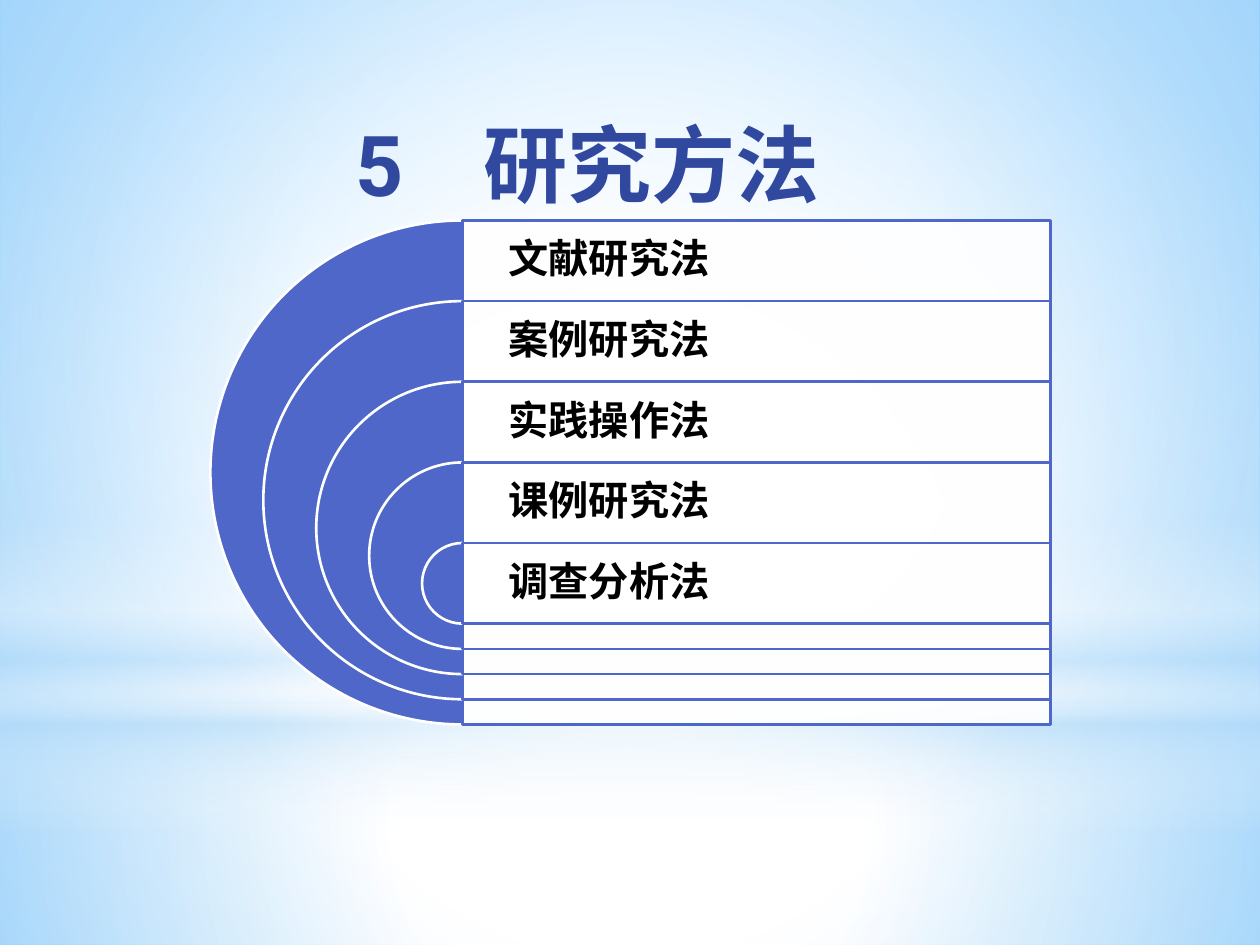
from dataclasses import dataclass

from lxml.etree import SubElement
from pptx import Presentation
from pptx.dml.color import RGBColor
from pptx.enum.shapes import MSO_SHAPE
from pptx.enum.text import MSO_ANCHOR, MSO_AUTO_SIZE, PP_ALIGN
from pptx.oxml.ns import qn
from pptx.util import Emu, Pt

PX = 9144  # 100 px to the inch


@dataclass(frozen=True)
class Theme:
    font: str = "Roboto"
    title_size: int = 48
    label_size: int = 23
    line_width: float = 1.5
    title: str = "31489F"
    accent: str = "4E67C8"
    white: str = "FFFFFF"
    black: str = "000000"
    sky: str = "63BCFF"
    mist: str = "B4DCFA"


THEME = Theme()
METHODS = ["文献研究法", "案例研究法", "实践操作法", "课例研究法", "调查分析法"]


def px(*lengths):
    return [Emu(length * PX) for length in lengths]


def set_gradient(fill, element, stops, center=None):
    """Stops are (position, colour, opacity) in percent; no center means top to bottom."""
    fill.gradient()
    gradient = next(element.iter(qn("a:gradFill")))
    for child in list(gradient):
        gradient.remove(child)
    stop_list = SubElement(gradient, qn("a:gsLst"))
    for position, color, opacity in stops:
        stop = SubElement(stop_list, qn("a:gs"), pos=str(position * 1000))
        set_opacity(SubElement(stop, qn("a:srgbClr"), val=color), opacity)
    if center is None:
        SubElement(gradient, qn("a:lin"), ang="5400000", scaled="0")
    else:
        path_fill = SubElement(gradient, qn("a:path"), path="circle")
        edges = {side: str(inset * 1000) for side, inset in zip("ltrb", center)}
        SubElement(path_fill, qn("a:fillToRect"), **edges)


def set_opacity(color_element, opacity):
    if opacity < 100:
        SubElement(color_element, qn("a:alpha"), val=str(opacity * 1000))


def add_plain_shape(shapes, kind, box):
    shape = shapes.add_shape(kind, *px(*box))
    shape.shadow.inherit = False
    shape.line.fill.background()
    return shape


def set_outline(shape, color):
    shape.line.color.rgb = RGBColor.from_string(color)
    shape.line.width = Pt(THEME.line_width)


def set_font(paragraph, size, color):
    font = paragraph.font
    font.name, font.size, font.bold = THEME.font, Pt(size), True
    font.color.rgb = RGBColor.from_string(color)


def add_backdrop(slide, box):
    left, top, width, height = box
    white, mist = THEME.white, THEME.mist
    middle = (50, 50, 50, 50)
    set_gradient(slide.background.fill, slide.element,
                 [(0, white, 100), (42, white, 100), (100, THEME.sky, 100)], (24, 44, 24, 12))
    horizon = 558
    layers = [
        # Floor, sky, horizon band and central glow
        (MSO_SHAPE.RECTANGLE, horizon, height - horizon,
         [(0, white, 91), (37, white, 76), (100, mist, 79)], middle),
        (MSO_SHAPE.RECTANGLE, 0, horizon,
         [(0, white, 89), (48, white, 62), (100, mist, 79)], middle),
        (MSO_SHAPE.RECTANGLE, 412, 250,
         [(0, white, 0), (29, white, 30), (45, mist, 40), (55, white, 26),
          (65, mist, 60), (100, white, 0)], None),
        (MSO_SHAPE.OVAL, 175, 558, [(0, white, 100), (56, white, 0)], middle),
    ]
    for kind, offset, layer_height, stops, center in layers:
        shape = add_plain_shape(slide.shapes, kind, (left, top + offset, width, layer_height))
        set_gradient(shape.fill, shape.element, stops, center)


def add_title(slide, box):
    frame = slide.shapes.add_textbox(*px(*box)).text_frame
    frame.word_wrap = True
    frame.auto_size = MSO_AUTO_SIZE.SHAPE_TO_FIT_TEXT
    paragraph = frame.paragraphs[0]
    paragraph.text = "5\t研究方法"
    # Tab stop between the number and the heading
    tabs = SubElement(paragraph._p.get_or_add_pPr(), qn("a:tabLst"))
    SubElement(tabs, qn("a:tab"), pos=str(102 * PX), algn="l")
    set_font(paragraph, THEME.title_size, THEME.title)


def add_label(shapes, text, box):
    frame = shapes.add_textbox(*px(*box)).text_frame
    frame.word_wrap = True
    frame.vertical_anchor = MSO_ANCHOR.MIDDLE
    frame.margin_left, frame.margin_top, frame.margin_right, frame.margin_bottom = px(10, 10, 10, 10)
    paragraph = frame.paragraphs[0]
    paragraph.text = text
    paragraph.alignment = PP_ALIGN.CENTER
    paragraph.line_spacing = 0.9
    paragraph.space_after = Pt(8)
    set_font(paragraph, THEME.label_size, THEME.black)


def add_nested_target(slide, box):
    left, top, width, height = box
    shapes = slide.shapes.add_group_shape().shapes
    row_height, shrink = 64, 84
    axis = left + height // 2
    panel_width = width - height // 2
    for level, method in enumerate(METHODS):
        diameter = height - level * shrink
        row_top = top + level * row_height

        # Half disc to the left of the axis
        disc = add_plain_shape(shapes, MSO_SHAPE.PIE,
                               (axis - diameter // 2, row_top, diameter, diameter))
        disc.adjustments[0], disc.adjustments[1] = 54, 162
        disc.fill.solid()
        disc.fill.fore_color.rgb = RGBColor.from_string(THEME.accent)
        set_outline(disc, THEME.white)

        # Translucent panel and its label
        panel = add_plain_shape(shapes, MSO_SHAPE.RECTANGLE,
                                (axis, row_top, panel_width, diameter))
        panel.fill.solid()
        panel.fill.fore_color.rgb = RGBColor.from_string(THEME.white)
        set_opacity(next(panel.element.spPr.iter(qn("a:srgbClr"))), 90)
        set_outline(panel, THEME.accent)
        add_label(shapes, method, (axis, row_top, panel_width // 2, row_height))


def main():
    presentation = Presentation()
    presentation.slide_width, presentation.slide_height = px(1000, 750)
    slide = presentation.slides.add_slide(presentation.slide_layouts[6])
    add_backdrop(slide, (0, 0, 1000, 750))
    add_title(slide, (272, 84, 457, 91))
    add_nested_target(slide, (167, 175, 667, 400))
    presentation.save("out.pptx")


if __name__ == "__main__":
    main()
